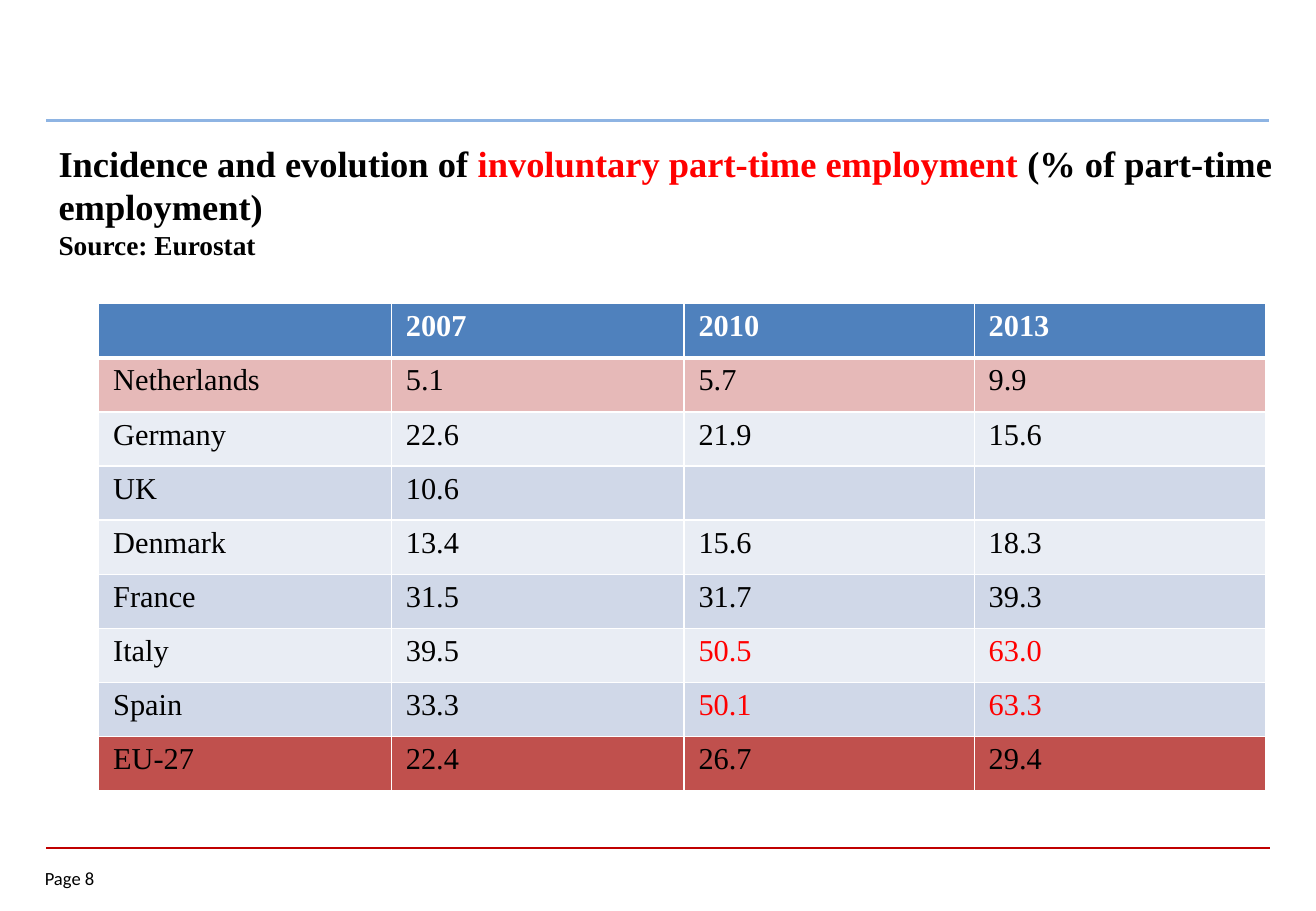
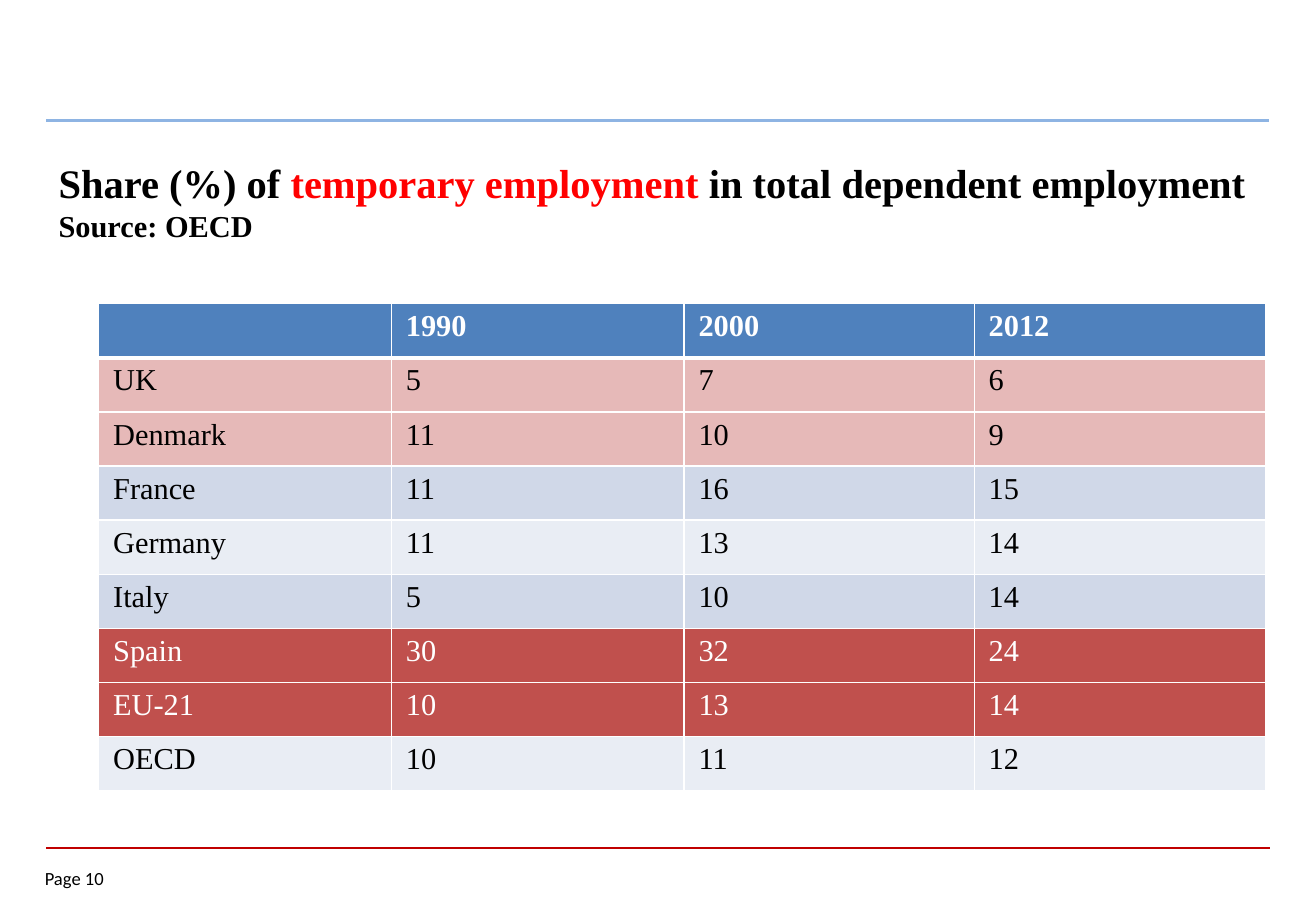
from lxml import etree
from pptx import Presentation
from pptx.dml.color import RGBColor
from pptx.enum.shapes import MSO_CONNECTOR
from pptx.enum.text import MSO_ANCHOR, MSO_AUTO_SIZE, PP_ALIGN
from pptx.oxml.ns import qn
from pptx.util import Pt

STRAIGHT = MSO_CONNECTOR.STRAIGHT
MIDDLE = MSO_ANCHOR.MIDDLE
NO_FIT = MSO_AUTO_SIZE.NONE
LEFT = PP_ALIGN.LEFT

COLORS = {
    "black": "000000", "white": "FFFFFF", "red": "FF0000",
    "top_rule": "8EB4E3", "bottom_rule": "C00000",
    "header": "4F81BD", "band_dark": "D0D8E8", "band_light": "E9EDF4",
    "rose": "E6B9B8", "brick": "C0504D",
}
SERIF = "Times New Roman"
TITLE_FRAME = {"word_wrap": True, "auto_size": NO_FIT, "vertical_anchor": MIDDLE}
FOOTER_FRAME = {"word_wrap": True, "margin_left": 0, "margin_top": 0,
                "margin_right": 0, "margin_bottom": 0}
CELL_MARGINS = {"margin_left": Pt(8.6), "margin_right": Pt(8.6),
                "margin_top": Pt(3.6), "margin_bottom": Pt(3.6)}
COLUMN_WIDTHS = (173.5, 173.5, 172, 172.5)
ROW_HEIGHT = 32.1

SLIDES = [
    {
        "page": "Page 8",
        "title": [("Incidence and evolution of ", "black"),
                  ("involuntary part-time employment ", "red"),
                  ("(% of part-time employment)", "black")],
        "source": "Source: Eurostat",
        "title_size": 21.6,
        "source_size": 16.2,
        "rows": [
            ("", "2007", "2010", "2013"),
            ("Netherlands", "5.1", "5.7", "9.9"),
            ("Germany", "22.6", "21.9", "15.6"),
            ("UK", "10.6", "", ""),
            ("Denmark", "13.4", "15.6", "18.3"),
            ("France", "31.5", "31.7", "39.3"),
            ("Italy", "39.5", "50.5", "63.0"),
            ("Spain", "33.3", "50.1", "63.3"),
            ("EU-27", "22.4", "26.7", "29.4"),
        ],
        "row_colors": {"Netherlands": ("rose", "black"), "EU-27": ("brick", "black")},
        "red_values": {"50.5", "63.0", "50.1", "63.3"},
    },
    {
        "page": "Page 10",
        "title": [("Share (%) of ", "black"),
                  ("temporary employment ", "red"),
                  ("in total dependent employment", "black")],
        "source": "Source: OECD",
        "title_size": 24,
        "source_size": 18,
        "rows": [
            ("", "1990", "2000", "2012"),
            ("UK", "5", "7", "6"),
            ("Denmark", "11", "10", "9"),
            ("France", "11", "16", "15"),
            ("Germany", "11", "13", "14"),
            ("Italy", "5", "10", "14"),
            ("Spain", "30", "32", "24"),
            ("EU-21", "10", "13", "14"),
            ("OECD", "10", "11", "12"),
        ],
        "row_colors": {"UK": ("rose", "black"), "Denmark": ("rose", "black"),
                       "Spain": ("brick", "white"), "EU-21": ("brick", "white")},
        "red_values": set(),
    },
]


def rgb(color):
    return RGBColor.from_string(COLORS[color])


def apply(target, values):
    for name, value in values.items():
        setattr(target, name, value)


def add_run(p, text, size, color, bold=False, name=SERIF):
    r = p.add_run()
    r.text = text
    apply(r.font, {"name": name, "size": Pt(size), "bold": bold})
    r.font.color.rgb = rgb(color)


def add_rule(s, left, right, y, color, width):
    line = s.shapes.add_connector(STRAIGHT, Pt(left), Pt(y), Pt(right), Pt(y))
    line.line.color.rgb = rgb(color)
    line.line.width = Pt(width)
    etree.SubElement(line._element.spPr, qn("a:effectLst"))


def add_frame(s, page):
    add_rule(s, 27.5, 753, 502.5, "bottom_rule", 1)
    add_rule(s, 27.5, 752, 71.5, "top_rule", 1.5)
    tf = s.shapes.add_textbox(Pt(26.6), Pt(514), Pt(52.5), Pt(16)).text_frame
    apply(tf, FOOTER_FRAME)
    add_run(tf.paragraphs[0], page, 11, "black", name="Calibri")


def set_title(s, content):
    sp = s.shapes.title
    apply(sp, {"left": Pt(27.5), "top": Pt(83), "width": Pt(746), "height": Pt(72)})
    tf = sp.text_frame
    apply(tf, TITLE_FRAME)
    p = tf.paragraphs[0]
    p.alignment = LEFT
    for text, color in content["title"]:
        add_run(p, text, content["title_size"], color, bold=True)
    p.add_line_break()
    add_run(p, content["source"], content["source_size"], "black", bold=True)


def set_borders(cell, widths):
    tc_pr = cell._tc.get_or_add_tcPr()
    for side, width in zip("LRTB", widths):
        ln = etree.SubElement(tc_pr, qn(f"a:ln{side}"), w=str(Pt(width)))
        fill = etree.SubElement(ln, qn("a:solidFill"))
        etree.SubElement(fill, qn("a:srgbClr"), val=COLORS["white"])


def row_style(index, label, row_colors):
    if index == 0:
        return "header", "white"
    band = "band_dark" if index % 2 else "band_light"
    return row_colors.get(label, (band, "black"))


def add_data_table(s, content):
    rows = content["rows"]
    table = s.shapes.add_table(len(rows), len(COLUMN_WIDTHS), Pt(58.5), Pt(180),
                               Pt(sum(COLUMN_WIDTHS)), Pt(ROW_HEIGHT * len(rows))).table
    table.horz_banding = False
    for column, width in zip(table.columns, COLUMN_WIDTHS):
        column.width = Pt(width)
    for i, values in enumerate(rows):
        table.rows[i].height = Pt(ROW_HEIGHT)
        fill, color = row_style(i, values[0], content["row_colors"])
        borders = (1, 1, 3 if i == 1 else 1, 3 if i == 0 else 1)
        for j, value in enumerate(values):
            cell = table.cell(i, j)
            apply(cell, CELL_MARGINS)
            set_borders(cell, borders)
            cell.fill.solid()
            cell.fill.fore_color.rgb = rgb(fill)
            if value:
                text_color = "red" if value in content["red_values"] else color
                add_run(cell.text_frame.paragraphs[0], value, 18, text_color, bold=i == 0)


def main():
    prs = Presentation()
    apply(prs, {"slide_width": Pt(780), "slide_height": Pt(540)})
    title_only = prs.slide_layouts.get_by_name("Title Only")
    for content in SLIDES:
        s = prs.slides.add_slide(title_only)
        add_frame(s, content["page"])
        set_title(s, content)
        add_data_table(s, content)
    prs.save("out.pptx")


if __name__ == "__main__":
    main()
